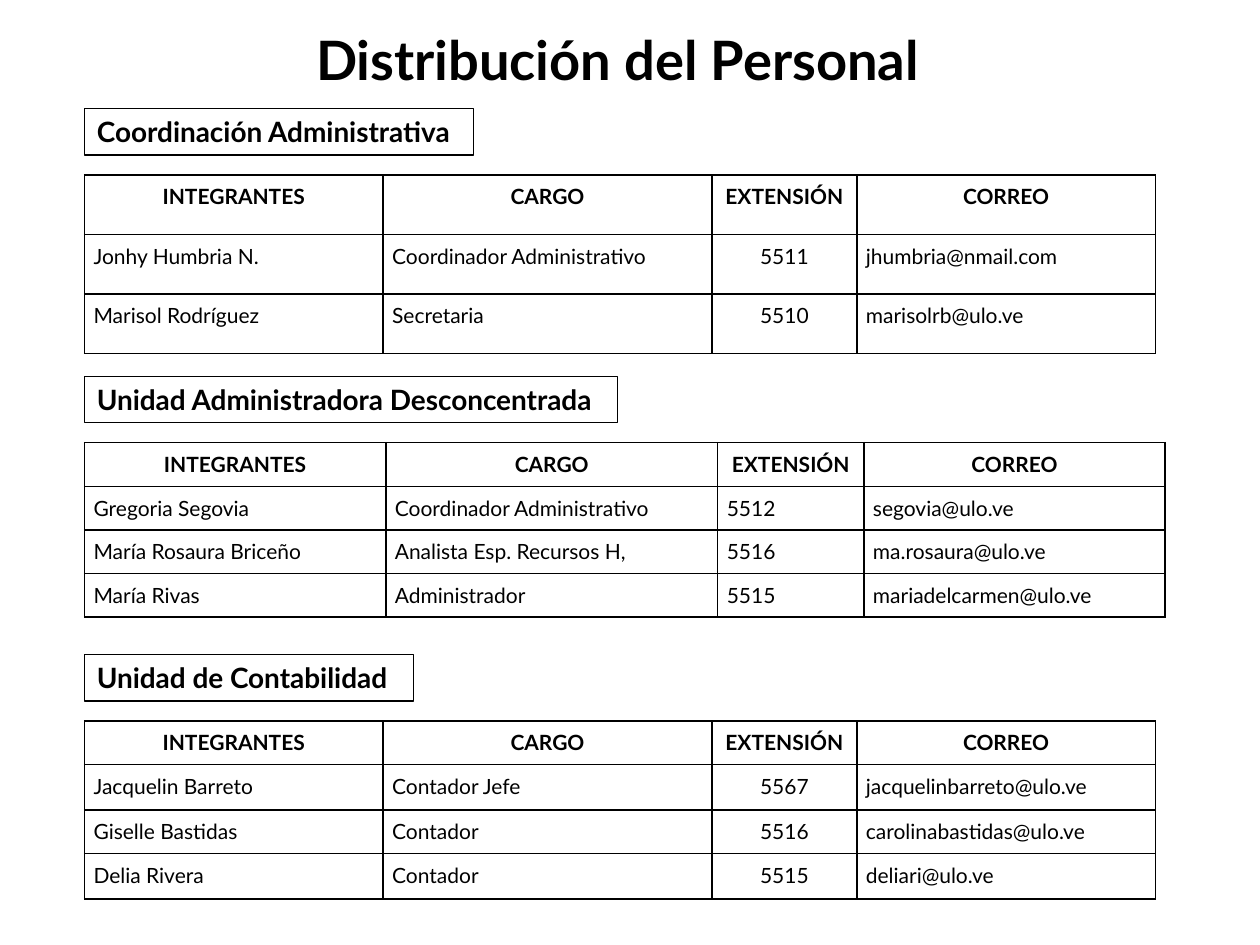
from pptx import Presentation
from pptx.dml.color import RGBColor as Rgb
from pptx.enum.shapes import MSO_SHAPE as Kind
from pptx.enum.text import MSO_ANCHOR as Anchor, PP_ALIGN as Align
from pptx.oxml import parse_xml
from pptx.oxml.ns import nsdecls
from pptx.util import Pt

TITLE = "Distribución del Personal"
HEADS = ("INTEGRANTES", "CARGO", "EXTENSIÓN", "CORREO")
UNITS = [
    dict(
        name="Coordinación Administrativa", top=62, label=222.5, width=612,
        heights=(34, 34, 34), mid=True,
        staff=[
            ("Jonhy Humbria N.", "Coordinador Administrativo", "5511", "jhumbria@nmail.com"),
            ("Marisol Rodríguez", "Secretaria", "5510", "marisolrb@ulo.ve"),
        ],
    ),
    dict(
        name="Unidad Administradora Desconcentrada", top=215, label=304.5, width=617.6,
        heights=(24.9, 24.9, 24.9, 24.9), mid=False,
        staff=[
            ("Gregoria Segovia", "Coordinador Administrativo", "5512", "segovia@ulo.ve"),
            ("María Rosaura Briceño", "Analista Esp. Recursos H,", "5516", "ma.rosaura@ulo.ve"),
            ("María Rivas", "Administrador", "5515", "mariadelcarmen@ulo.ve"),
        ],
    ),
    dict(
        name="Unidad de Contabilidad", top=374, label=188, width=612,
        heights=(24.9, 26, 24.9, 26), mid=True,
        staff=[
            ("Jacquelin Barreto", "Contador Jefe", "5567", "jacquelinbarreto@ulo.ve"),
            ("Giselle Bastidas", "Contador", "5516", "carolinabastidas@ulo.ve"),
            ("Delia Rivera", "Contador", "5515", "deliari@ulo.ve"),
        ],
    ),
]
THEME = dict(font="Lato", ink="000000", title=31, label=16, cell=12, rule=0.75, grid=1)
LEFT, DROP, TALL, PAD = 48.3, 38, 26.6, 5.2
SHARES = (2.37, 2.61, 1.15, 2.37)


def write(frame, text, size, bold=False, align=Align.LEFT):
    para = frame.paragraphs[0]
    para.alignment = align
    run = para.add_run()
    run.text = text
    run.font.name = THEME["font"]
    run.font.size = Pt(THEME[size])
    run.font.bold = bold
    run.font.color.rgb = Rgb.from_string(THEME["ink"])


def edge(cell):
    props = cell._tc.get_or_add_tcPr()
    for spot, side in enumerate("LRTB"):
        props.insert(spot, parse_xml(
            f'<a:ln{side} {nsdecls("a")} w="{Pt(THEME["grid"])}"><a:solidFill>'
            f'<a:srgbClr val="{THEME["ink"]}"/></a:solidFill></a:ln{side}>'
        ))


def add_label(slide, unit):
    box = slide.shapes.add_shape(
        Kind.RECTANGLE, Pt(LEFT), Pt(unit["top"]), Pt(unit["label"]), Pt(TALL)
    )
    box.shadow.inherit = False
    box.fill.background()
    box.line.color.rgb = Rgb.from_string(THEME["ink"])
    box.line.width = Pt(THEME["rule"])
    box.text_frame.word_wrap = True
    write(box.text_frame, unit["name"], "label", bold=True)


def add_staff(slide, unit):
    rows = [HEADS, *unit["staff"]]
    table = slide.shapes.add_table(
        len(rows), len(HEADS), Pt(LEFT), Pt(unit["top"] + DROP),
        Pt(unit["width"]), Pt(sum(unit["heights"])),
    ).table
    table.horz_banding = False
    table.first_row = False
    for col, share in zip(table.columns, SHARES):
        col.width = Pt(unit["width"] * share / sum(SHARES))
    for row, tall in zip(table.rows, unit["heights"]):
        row.height = Pt(tall)
    for r, row in enumerate(rows):
        for c, text in enumerate(row):
            cell = table.cell(r, c)
            cell.margin_left = cell.margin_right = Pt(PAD)
            cell.margin_top = cell.margin_bottom = Pt(PAD)
            cell.fill.background()
            edge(cell)
            head = r == 0
            mid = head or (c == 2 and unit["mid"])
            write(cell.text_frame, text, "cell", bold=head,
                  align=Align.CENTER if mid else Align.LEFT)


def main():
    deck = Presentation()
    deck.slide_width, deck.slide_height = Pt(720), Pt(540)
    slide = deck.slides.add_slide(deck.slide_layouts[6])
    frame = slide.shapes.add_textbox(Pt(28.8), Pt(1.5), Pt(648), Pt(64)).text_frame
    frame.word_wrap = True
    frame.vertical_anchor = Anchor.MIDDLE
    write(frame, TITLE, "title", bold=True, align=Align.CENTER)
    for unit in UNITS:
        add_label(slide, unit)
        add_staff(slide, unit)
    deck.save("out.pptx")


if __name__ == "__main__":
    main()
